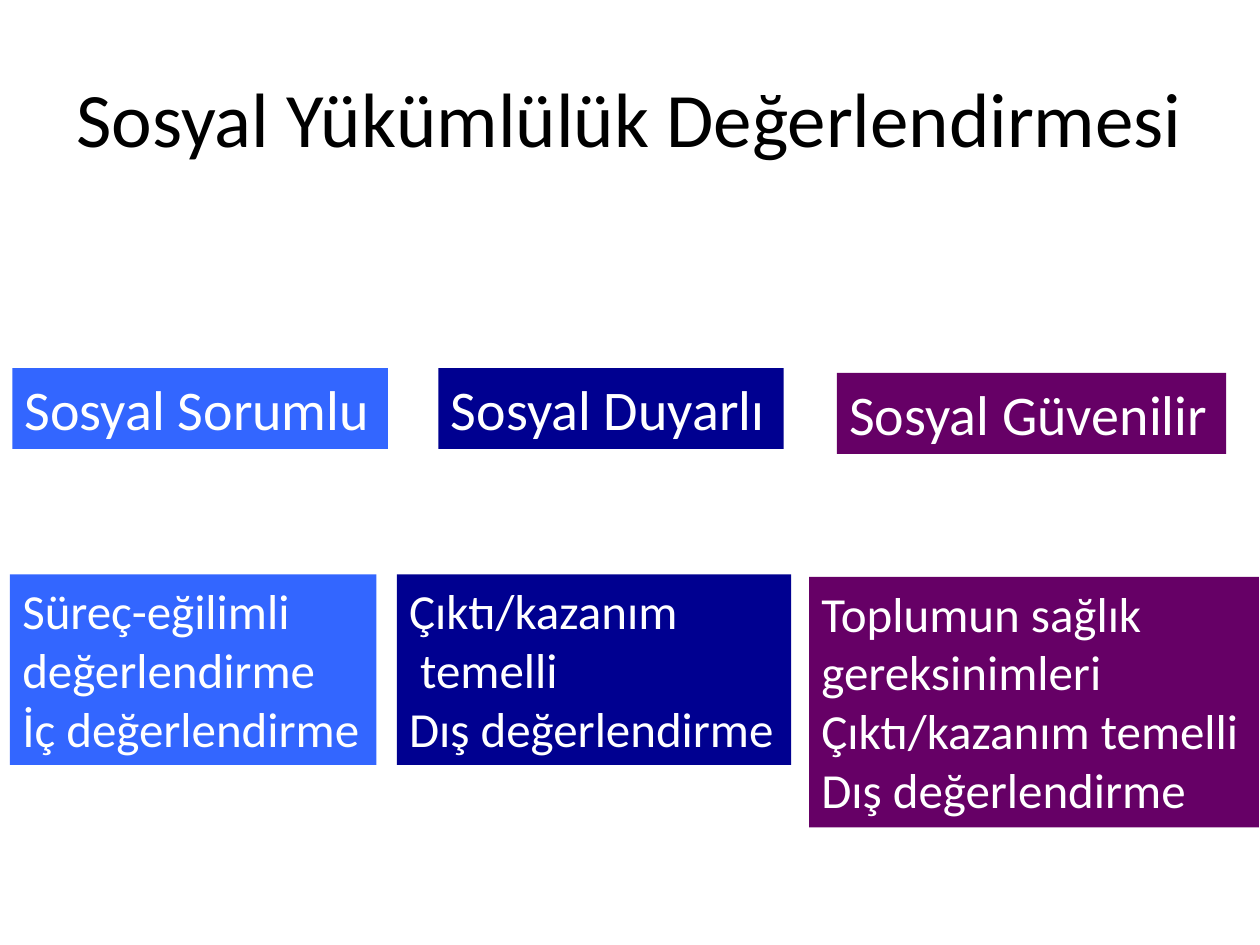
from pptx import Presentation
from pptx.dml.color import RGBColor
from pptx.enum.text import MSO_ANCHOR, PP_ALIGN
from pptx.util import Cm, Pt

FONT = "Calibri"
WHITE = "FFFFFF"

# Per column: colour, heading box, heading, detail box, detail lines
# Boxes are left, top, width, height in cm
COLUMNS = [
    ("3366FF", (0.25, 7.42, 7.57, 1.63), "Sosyal Sorumlu",
     (0.2, 11.58, 7.39, 3.84),
     ["Süreç-eğilimli", "değerlendirme", "İç değerlendirme"]),
    ("000090", (8.84, 7.42, 6.96, 1.63), "Sosyal Duyarlı",
     (8, 11.58, 7.95, 3.84),
     ["Çıktı/kazanım", " temelli", "Dış değerlendirme"]),
    ("660066", (16.87, 7.52, 7.85, 1.63), "Sosyal Güvenilir",
     (16.31, 11.63, 9.07, 5.05),
     ["Toplumun sağlık", "gereksinimleri", "Çıktı/kazanım temelli",
      "Dış değerlendirme"]),
]


def paint(target, color):
    target.rgb = RGBColor.from_string(color)


def style(para, size, color, align):
    para.alignment = align
    para.font.name = FONT
    para.font.size = Pt(size)
    paint(para.font.color, color)


def place(shape, box):
    shape.left, shape.top, shape.width, shape.height = map(Cm, box)


def add_title(slide, text):
    title = slide.shapes.title
    place(title, (1.27, 0.76, 22.86, 3.18))
    frame = title.text_frame
    frame.text = text
    frame.vertical_anchor = MSO_ANCHOR.MIDDLE
    style(frame.paragraphs[0], 44, "000000", PP_ALIGN.CENTER)


def add_box(slide, box, fill, lines, size):
    shape = slide.shapes.add_textbox(*map(Cm, box))
    shape.fill.solid()
    paint(shape.fill.fore_color, fill)
    frame = shape.text_frame
    frame.word_wrap = False
    frame.text = "\n".join(lines)
    for para in frame.paragraphs:
        style(para, size, WHITE, PP_ALIGN.LEFT)


def main():
    deck = Presentation()
    deck.slide_width, deck.slide_height = Cm(25.4), Cm(19.05)
    slide = deck.slides.add_slide(deck.slide_layouts[5])
    add_title(slide, "Sosyal Yükümlülük Değerlendirmesi")

    # Details in the lower row, headings in the upper row
    for color, top, head, low, lines in COLUMNS:
        add_box(slide, low, color, lines, 28)
        add_box(slide, top, color, [head], 32)

    deck.save("out.pptx")


if __name__ == "__main__":
    main()
